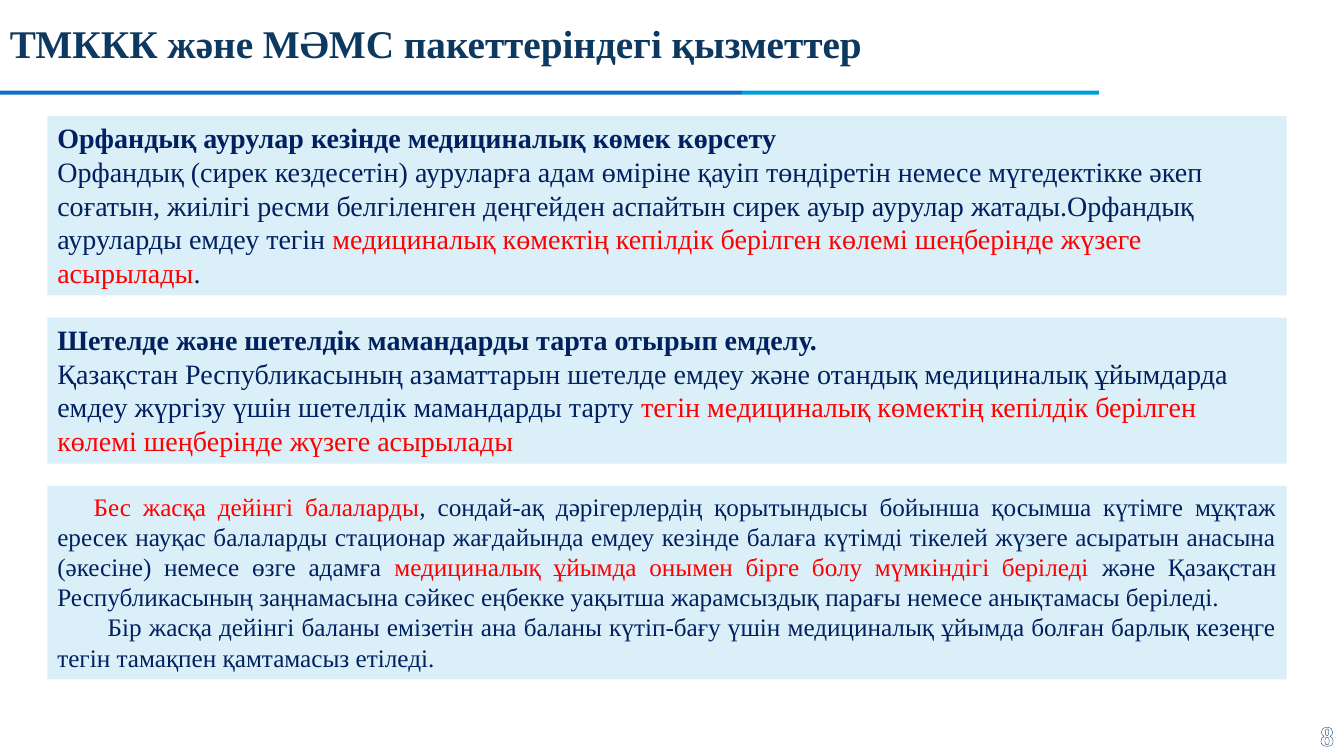
from lxml import etree
from pptx import Presentation
from pptx.dml.color import RGBColor
from pptx.enum import shapes, text
from pptx.oxml.ns import qn
from pptx.util import Inches, Pt

# Content
COLORS = {
    "navy": "002060", "red": "FF0000", "title": "0D3860", "panel": "DBEFF9",
    "rule_dark": "0F6FC6", "rule_light": "009DD9",
    "white": "FFFFFF", "outline": "0E385E",
}
SERIF = "Times New Roman"
TITLE = "ТМККК және МӘМС пакеттеріндегі қызметтер"
PAGE = "8"
RULES = [(0, 7.36, "rule_dark"), (7.36, 3.54, "rule_light")]  # left, width, colour

# Each paragraph: first-line indent, then runs of (text, colour, bold)
PANELS = [
    {"height": 1.78, "size": 20, "align": "LEFT", "paragraphs": [
        (0, [("Орфандық аурулар кезінде медициналық көмек көрсету", "navy", True)]),
        (0, [("Орфандық (сирек кездесетін) ауруларға адам өміріне қауіп төндіретін "
              "немесе мүгедектікке әкеп соғатын, жиілігі ресми белгіленген деңгейден "
              "аспайтын сирек ауыр аурулар жатады.Орфандық ауруларды емдеу тегін ",
              "navy", False),
             ("медициналық көмектің кепілдік берілген көлемі шеңберінде жүзеге "
              "асырылады", "red", False),
             (".", "navy", False)]),
    ]},
    {"height": 1.45, "size": 20, "align": "LEFT", "paragraphs": [
        (0, [("Шетелде және шетелдік мамандарды тарта отырып емделу.", "navy", True)]),
        (0, [("Қазақстан Республикасының азаматтарын шетелде емдеу және отандық "
              "медициналық ұйымдарда емдеу жүргізу үшін шетелдік мамандарды тарту ",
              "navy", False),
             ("тегін медициналық көмектің кепілдік берілген көлемі шеңберінде жүзеге "
              "асырылады", "red", False)]),
    ]},
    {"height": 1.92, "size": 18, "align": "JUSTIFY", "paragraphs": [
        (0.36, [("Бес жасқа дейінгі балаларды", "red", False),
                (", сондай-ақ дәрігерлердің қорытындысы бойынша қосымша күтімге мұқтаж "
                 "ересек науқас балаларды стационар жағдайында емдеу кезінде балаға "
                 "күтімді тікелей жүзеге асыратын анасына (әкесіне) немесе өзге адамға ",
                 "navy", False),
                ("медициналық ұйымда онымен бірге болу мүмкіндігі беріледі ",
                 "red", False),
                ("және Қазақстан Республикасының заңнамасына сәйкес еңбекке уақытша "
                 "жарамсыздық парағы немесе анықтамасы беріледі.", "navy", False)]),
        (0.5, [("Бір жасқа дейінгі баланы емізетін ана баланы күтіп-бағу үшін "
                "медициналық ұйымда болған барлық кезеңге тегін тамақпен қамтамасыз "
                "етіледі.", "navy", False)]),
    ]},
]
PANEL_LEFT, PANEL_TOP, PANEL_WIDTH, PANEL_GAP = 0.47, 1.15, 12.29, 0.22


def rgb(name):
    return RGBColor.from_string(COLORS[name])


def add_box(slide, left, top, width, height, fill):
    box = slide.shapes.add_shape(shapes.MSO_SHAPE.RECTANGLE, Inches(left),
                                 Inches(top), Inches(width), Inches(height))
    box.shadow.inherit = False
    box.fill.solid()
    box.fill.fore_color.rgb = rgb(fill)
    box.line.fill.background()
    return box


def add_label(slide, left, top, width, height):
    return slide.shapes.add_textbox(Inches(left), Inches(top),
                                    Inches(width), Inches(height))


def write(box, paragraphs, size, align="LEFT", anchor="TOP"):
    frame = box.text_frame
    frame.word_wrap = True
    frame.vertical_anchor = text.MSO_ANCHOR[anchor]
    for index, (indent, runs) in enumerate(paragraphs):
        paragraph = frame.add_paragraph() if index else frame.paragraphs[0]
        paragraph.alignment = text.PP_ALIGN[align]
        if indent:
            paragraph._p.get_or_add_pPr().set("indent", str(Inches(indent)))
        for words, color, bold in runs:
            run = paragraph.add_run()
            run.text = words
            run.font.name = SERIF
            run.font.size = Pt(size)
            run.font.bold = bold
            run.font.color.rgb = rgb(color)
    return frame


def outline_text(run, color, width):
    line = etree.Element(qn("a:ln"), w=str(Pt(width)))
    fill = etree.SubElement(line, qn("a:solidFill"))
    etree.SubElement(fill, qn("a:srgbClr"), val=COLORS[color])
    run.font._element.insert(0, line)


def main():
    deck = Presentation()
    deck.slide_width, deck.slide_height = Inches(13.33), Inches(7.5)
    slide = deck.slides.add_slide(deck.slide_layouts[6])

    # Header: two-tone rule and title
    for left, width, color in RULES:
        add_box(slide, left, 0.9, width, 0.04, color)
    title = add_label(slide, 0, 0, 10.33, 0.9)
    heading = write(title, [(0, [(TITLE, "title", True)])], 28, anchor="MIDDLE")
    heading.paragraphs[0].line_spacing = 0.9

    # Text panels stacked with equal gaps
    top = PANEL_TOP
    for panel in PANELS:
        box = add_box(slide, PANEL_LEFT, top, PANEL_WIDTH, panel["height"], "panel")
        write(box, panel["paragraphs"], panel["size"], align=panel["align"])
        top += panel["height"] + PANEL_GAP

    # Page number
    page = add_label(slide, 10.33, 7.09, 3, 0.4)
    number = write(page, [(0, [(PAGE, "white", True)])], 20,
                   align="RIGHT", anchor="MIDDLE")
    outline_text(number.paragraphs[0].runs[0], "outline", 0.52)

    deck.save("out.pptx")


if __name__ == "__main__":
    main()
